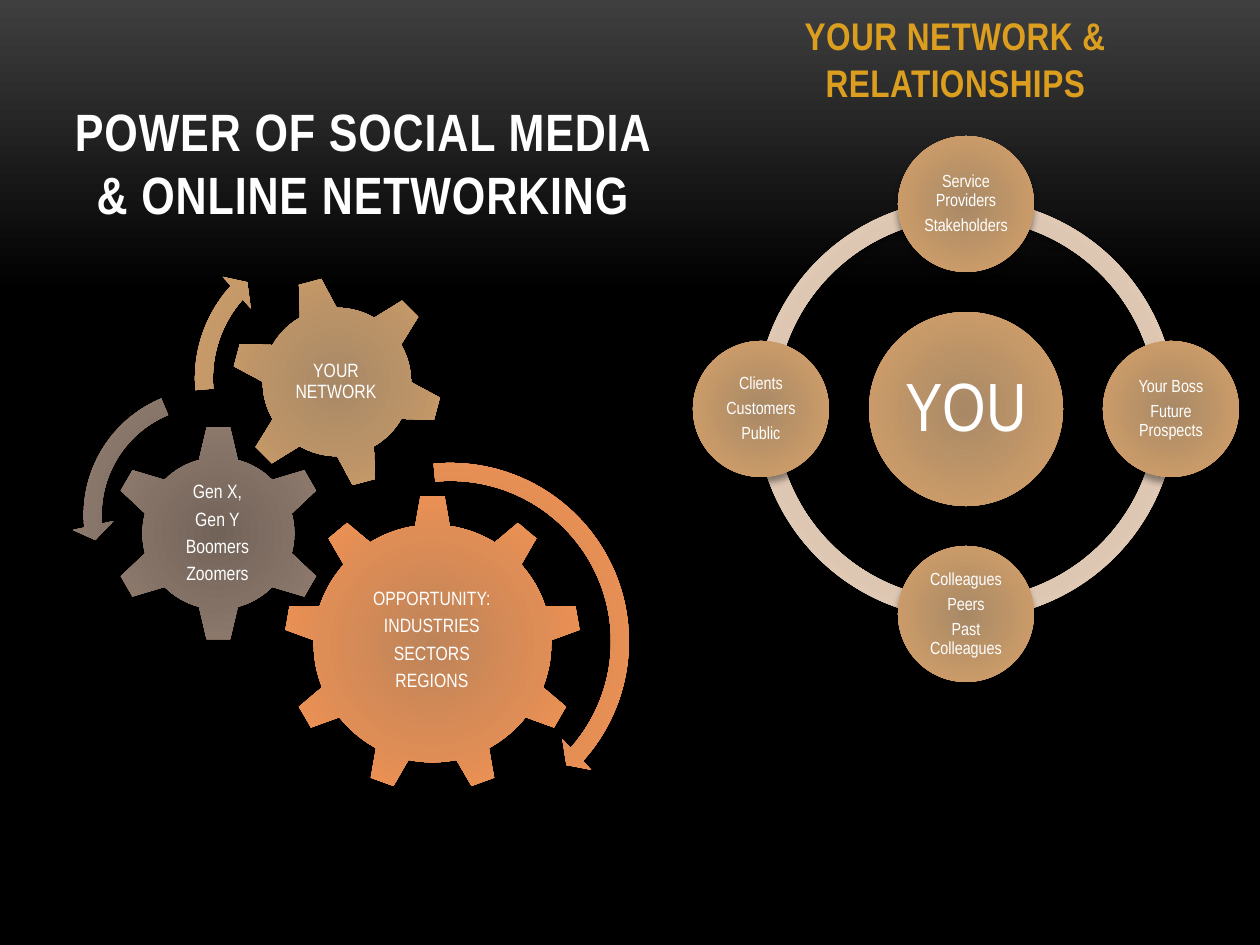
"""Build the slide on social media, online networking and relationships."""
from pptx import Presentation, util as u
from pptx.dml.color import RGBColor
from pptx.enum import shapes, text
from pptx.oxml import parse_xml
from pptx.oxml.ns import nsdecls, qn
from copy import deepcopy

PX = u.Inches(1) / 126
WHITE = RGBColor(0xFF, 0xFF, 0xFF)
GOLD = RGBColor(0xDC, 0x9E, 0x1F)
BLACK = RGBColor(0, 0, 0)
CHARCOAL = RGBColor(0x3F, 0x3F, 0x3F)
PALE = RGBColor(0xC8, 0xBA, 0xAD), RGBColor(0xE7, 0xCD, 0xB6)
TAN = RGBColor(0xA8, 0x89, 0x66), RGBColor(0xD9, 0xA3, 0x6A)
ORANGE = RGBColor(0xBE, 0x84, 0x59), RGBColor(0xFC, 0x95, 0x53)
BROWN = RGBColor(0x72, 0x63, 0x59), RGBColor(0x98, 0x82, 0x74)
KIND = shapes.MSO_SHAPE

RADIAL = (f'<a:path {nsdecls("a")} path="circle"><a:fillToRect l="100000" '
          't="100000" r="100000" b="100000"/></a:path>')
SHADOW = (f'<a:outerShdw {nsdecls("a")} blurRad="50800" dist="43180" dir="5400000" '
          'rotWithShape="0"><a:srgbClr val="000000"><a:alpha val="40000"/>'
          '</a:srgbClr></a:outerShdw>')


def add_square(kind, left, top, size, colours, adjustments=(), rotation=0):
    shape = page.shapes.add_shape(kind, *[round(v * PX) for v in (left, top, size, size)])
    for index, value in enumerate(adjustments):
        shape.adjustments[index] = value
    shape.rotation = rotation
    shape.line.fill.background()
    shape.fill.gradient()
    for stop, colour in zip(shape.fill.gradient_stops, colours):
        stop.color.rgb = colour
    properties = shape._element.spPr
    linear = properties.find(qn("a:gradFill")).find(qn("a:lin"))
    linear.getparent().replace(linear, parse_xml(RADIAL))
    shape.shadow.inherit = False
    properties.find(qn("a:effectLst")).append(parse_xml(SHADOW))
    return shape


def write(box, lines, size, colour=WHITE, bold=False, tracking=0, inset=0.02,
          anchor=text.MSO_ANCHOR.MIDDLE, line_spacing=0.9, after=0.35):
    frame = box.text_frame
    frame.word_wrap = True
    frame.auto_size = text.MSO_AUTO_SIZE.NONE
    frame.vertical_anchor = anchor
    if inset is not None:
        frame.margin_left = frame.margin_right = u.Inches(inset)
        frame.margin_top = frame.margin_bottom = u.Inches(inset)
    for index, line in enumerate(lines):
        para = frame.add_paragraph() if index else frame.paragraphs[0]
        para.alignment = text.PP_ALIGN.CENTER
        para.line_spacing = line_spacing
        para.space_before = u.Pt(0)
        para.space_after = u.Pt(size * after)
        span = para.add_run()
        span.text = line
        span.font.name = "Arial Narrow"
        span.font.size = u.Pt(size)
        span.font.bold = bold
        span.font.color.rgb = colour
        if tracking:
            span.font._element.set("spc", str(tracking))


deck = Presentation()
deck.slide_width, deck.slide_height = round(1260 * PX), round(945 * PX)
page = deck.slides.add_slide(deck.slide_layouts[5])

backdrop = page.background.fill
backdrop.gradient()
backdrop.gradient_angle = 270
for stop, colour, position in zip(backdrop.gradient_stops, (CHARCOAL, BLACK), (0, 0.31)):
    stop.color.rgb = colour
    stop.position = position
last_stop = backdrop.gradient_stops[1]._gs
last_stop.addnext(deepcopy(last_stop))
backdrop.gradient_stops[2].position = 1

title = page.shapes.title
title.left, title.top, title.width, title.height = [round(v * PX) for v in (53, 32, 620, 199)]
write(title, ["POWER OF SOCIAL MEDIA & ONLINE NETWORKING"], 30, bold=True, tracking=50,
      inset=None, anchor=text.MSO_ANCHOR.BOTTOM, line_spacing=1.0, after=0)

CENTRE_X, CENTRE_Y, ORBIT = 966, 409, 205
RING, HUB, SATELLITE = 420, 194, 136
for start, end in ((108, 162), (54, 108), (0, 54), (162, 0)):
    add_square(KIND.BLOCK_ARC, CENTRE_X - RING / 2, CENTRE_Y - RING / 2, RING, PALE,
               (start, end, 0.046))

hub = add_square(KIND.OVAL, CENTRE_X - HUB / 2, CENTRE_Y - HUB / 2, HUB, TAN)
write(hub, ["YOU"], 39, inset=0.05)

satellites = (
    (0, -1, ["Service Providers", "Stakeholders"]),
    (1, 0, ["Your Boss", "Future Prospects"]),
    (0, 1, ["Colleagues", "Peers", "Past Colleagues"]),
    (-1, 0, ["Clients", "Customers", "Public"]),
)
for across, down, lines in satellites:
    circle = add_square(KIND.OVAL, CENTRE_X + across * ORBIT - SATELLITE / 2,
                        CENTRE_Y + down * ORBIT - SATELLITE / 2, SATELLITE, TAN)
    write(circle, lines, 10, inset=0.01)

gears = (
    (KIND.GEAR_9, 284, 495, 297, ORANGE, 0, (343, 564, 178, 152),
     ["OPPORTUNITY:", "INDUSTRIES", "SECTORS", "REGIONS"]),
    (KIND.GEAR_6, 110, 425, 217, BROWN, 0, (164, 480, 107, 107),
     ["Gen X,", "Gen Y", "Boomers", "Zoomers"]),
    (KIND.GEAR_6, 231, 276, 212, TAN, 345, (277, 323, 118, 118), ["YOUR NETWORK"]),
)
for kind, left, top, size, colours, rotation, label_area, lines in gears:
    add_square(kind, left, top, size, colours, rotation=rotation)
    label = page.shapes.add_textbox(*[round(v * PX) for v in label_area])
    write(label, lines, 11)

arrows = (
    (KIND.CIRCULAR_ARROW, 260, 451, 381, ORANGE, (0.047, 2.99, 25.09, 158.76, 0.055)),
    (KIND.LEFT_CIRCULAR_ARROW, 72, 377, 276, BROWN, (0.065, 4.3, 104.89, 148.38, 0.075)),
    (KIND.CIRCULAR_ARROW, 183, 229, 299, TAN, (0.06, 3.94, 133.14, 105.08, 0.07)),
)
for arrow in arrows:
    add_square(*arrow)

heading = page.shapes.add_textbox(*[round(v * PX) for v in (672, 32, 567, 79)])
write(heading, ["YOUR NETWORK & RELATIONSHIPS"], 22, colour=GOLD, bold=True, tracking=30,
      inset=None, anchor=text.MSO_ANCHOR.BOTTOM, line_spacing=1.0, after=0.27)

deck.save("out.pptx")
